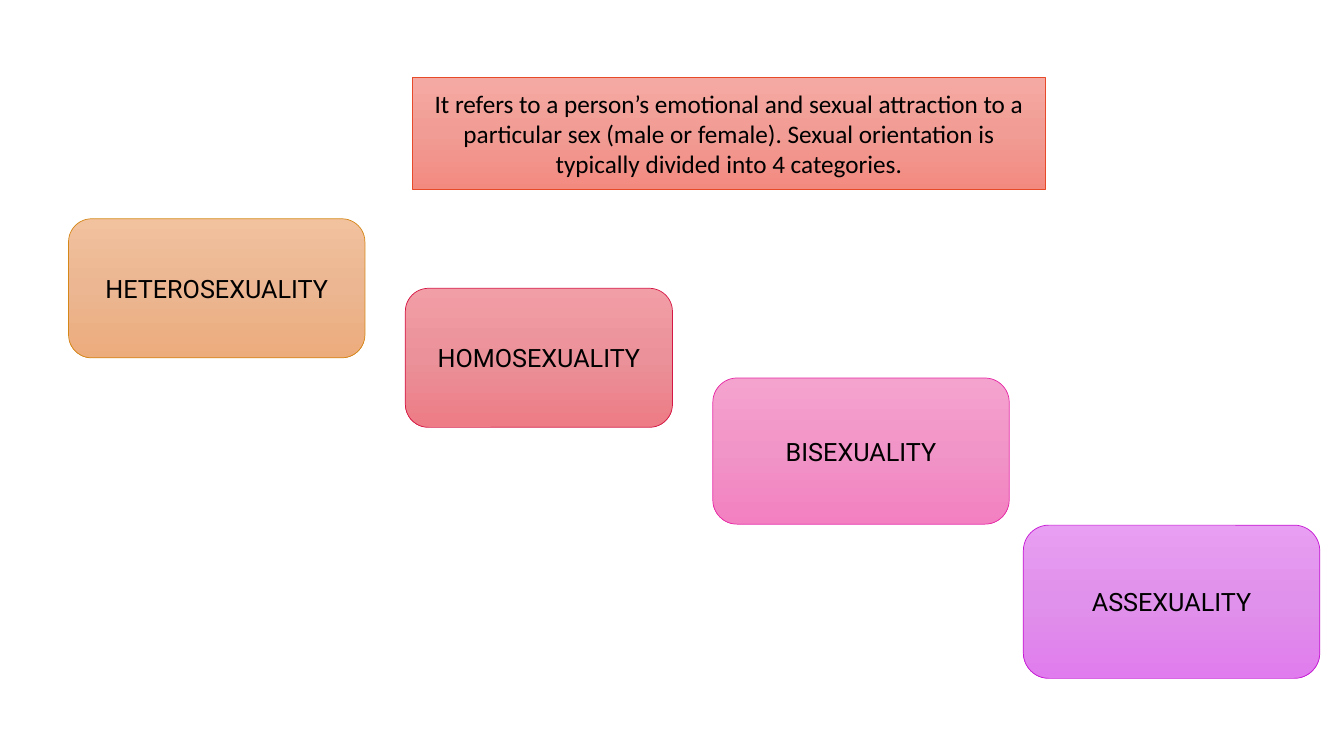
from copy import deepcopy

from pptx import Presentation
from pptx.dml.color import RGBColor
from pptx.enum.shapes import MSO_SHAPE
from pptx.enum.text import MSO_ANCHOR, PP_ALIGN
from pptx.oxml.ns import qn
from pptx.util import Emu, Pt

PX = 9144  # 100 px to the inch
BLACK = RGBColor(0x00, 0x00, 0x00)

# Gradient from top to bottom, then the outline
RED = [RGBColor.from_string(c) for c in ("F4AAA3", "F19C94", "F38A80", "E74A29")]
ORANGE = [RGBColor.from_string(c) for c in ("F2C19E", "EBB691", "EDAC7C", "D58717")]
ROSE = [RGBColor.from_string(c) for c in ("F29EA6", "EB9199", "ED7C86", "D51745")]
PINK = [RGBColor.from_string(c) for c in ("F4A3CF", "F194C7", "F380C1", "E729A6")]
PURPLE = [RGBColor.from_string(c) for c in ("E89EF2", "E091EB", "E07CED", "C617D5")]

# Content: text, box (left, top, width, height) in px, colours
DEFINITION = (
    "It refers to a person’s emotional and sexual attraction to a particular sex "
    "(male or female). Sexual orientation is typically divided into 4 categories.",
    (409, 77, 628, 111), RED)
CATEGORIES = [
    ("HETEROSEXUALITY", (68, 217, 294, 138), ORANGE),
    ("HOMOSEXUALITY", (402, 286, 265, 138), ROSE),
    ("BISEXUALITY", (707, 375, 294, 145), PINK),
    ("ASSEXUALITY", (1015, 521, 294, 152), PURPLE),
]


def fill_gradient(sp, colours):
    fill = sp.fill
    fill.gradient()
    fill.gradient_angle = 270  # counter-clockwise, so top to bottom
    stops = sp._element.spPr.find(qn("a:gradFill")).find(qn("a:gsLst"))
    stops.insert(1, deepcopy(stops[0]))
    for stop, position, colour in zip(fill.gradient_stops, (0, 0.5, 1), colours):
        stop.position = position
        stop.color.rgb = colour


def add_box(slide, text, box, colours, kind=MSO_SHAPE.ROUNDED_RECTANGLE,
            font="Roboto", size=18):
    sp = slide.shapes.add_shape(kind, *(Emu(v * PX) for v in box))
    sp.shadow.inherit = False
    fill_gradient(sp, colours[:3])
    sp.line.color.rgb = colours[3]
    sp.line.width = Pt(0.5)
    tf = sp.text_frame
    tf.word_wrap = True
    tf.vertical_anchor = MSO_ANCHOR.MIDDLE
    p = tf.paragraphs[0]
    p.alignment = PP_ALIGN.CENTER
    r = p.add_run()
    r.text = text
    r.font.name = font
    r.font.size = Pt(size)
    r.font.color.rgb = BLACK


prs = Presentation()
prs.slide_width, prs.slide_height = Emu(1333 * PX), Emu(750 * PX)
slide = prs.slides.add_slide(prs.slide_layouts[6])

# Definition
add_box(slide, *DEFINITION, kind=MSO_SHAPE.RECTANGLE, font="Calibri")

# Staircase of categories
for category in CATEGORIES:
    add_box(slide, *category)

prs.save("out.pptx")
